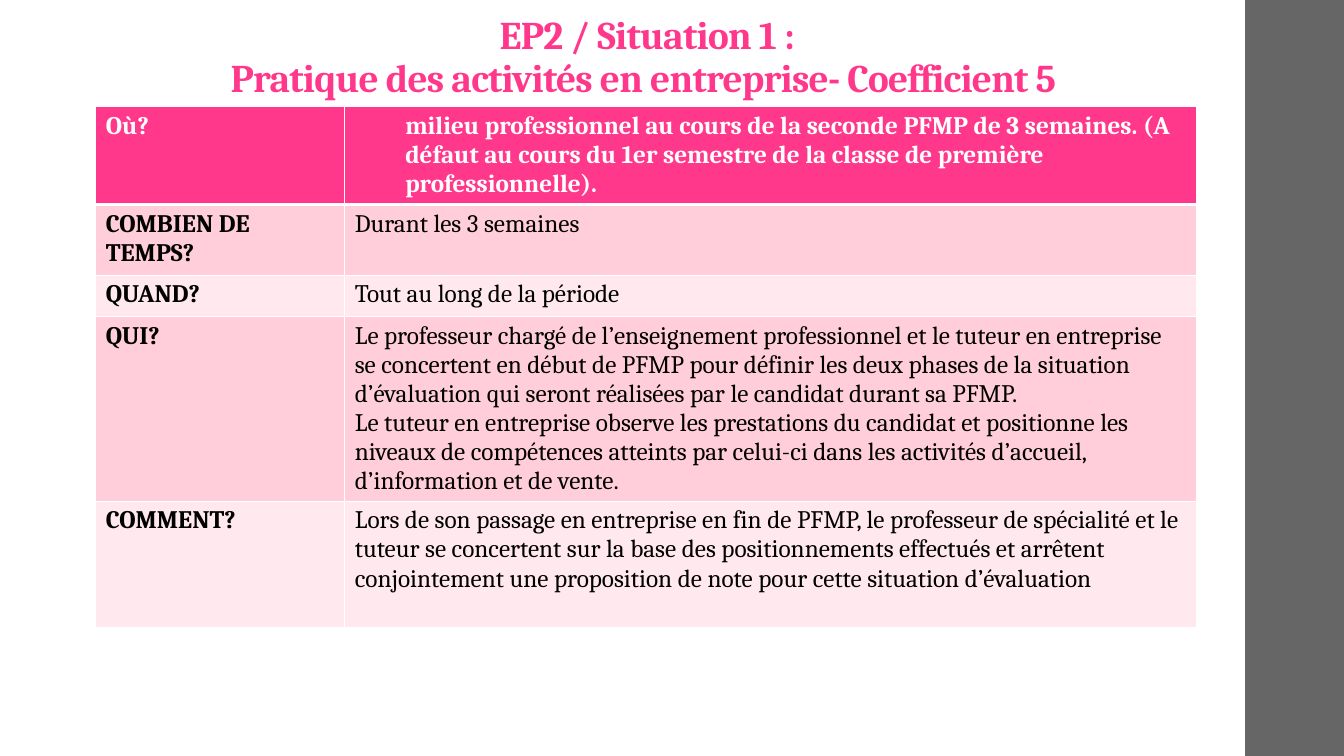
from pptx import Presentation
from pptx.dml.color import RGBColor
from pptx.enum.shapes import MSO_SHAPE as SHAPE
from pptx.enum.text import MSO_ANCHOR as ANCHOR, MSO_AUTO_SIZE as AUTO, PP_ALIGN as ALIGN
from pptx.oxml import parse_xml
from pptx.oxml.ns import nsdecls
from pptx.util import Inches, Pt

WHITE = RGBColor(0xFF, 0xFF, 0xFF)
BLACK = RGBColor(0, 0, 0)
GREY = RGBColor(0x66, 0x66, 0x66)
PINK = RGBColor(0xFF, 0x38, 0x8C)
BANDS = [RGBColor(0xFF, 0xE8, 0xEE), RGBColor(0xFF, 0xCE, 0xDA)]
FONT = "Cambria"

COL_WIDTHS = [2.47, 8.45]
ROWS = [
    (0.97, "Où?", ["milieu professionnel au cours de la seconde PFMP de 3 semaines. "
                   "(A défaut au cours du 1er semestre de la classe de première professionnelle)."]),
    (0.7, "COMBIEN DE TEMPS?", ["Durant les 3 semaines"]),
    (0.41, "QUAND?", ["Tout au long de la période"]),
    (1.82, "QUI?", [
        "Le professeur chargé de l’enseignement professionnel et le tuteur en entreprise "
        "se concertent en début de PFMP pour définir les deux phases de la situation "
        "d’évaluation qui seront réalisées par le candidat durant sa PFMP.",
        "Le tuteur en entreprise observe les prestations du candidat et positionne les "
        "niveaux de compétences atteints par celui-ci dans les activités d’accueil, "
        "d’information et de vente."]),
    (1.26, "COMMENT?", [
        "Lors de son passage en entreprise en fin de PFMP, le professeur de spécialité et le "
        "tuteur se concertent sur la base des positionnements effectués et arrêtent "
        "conjointement une proposition de note pour cette situation d’évaluation"]),
]


def write(p, text, size=18, color=BLACK, bold=False, align=None, spacing=None, tracking=None):
    p.alignment = align
    p.line_spacing = spacing
    for i, line in enumerate(text.split("\n")):
        if i:
            p.add_line_break()
        r = p.add_run()
        r.text = line
        r.font.name, r.font.size, r.font.bold = FONT, Pt(size), bold
        r.font.color.rgb = color
        if tracking is not None:
            r._r.get_or_add_rPr().set("spc", str(int(tracking * 100)))


def set_borders(cell, **widths):
    tcPr = cell._tc.get_or_add_tcPr()
    for side in "LRTB":
        width = Pt(widths.get(side, 1))
        tcPr.append(parse_xml(
            f'<a:ln{side} {nsdecls("a")} w="{width}"><a:solidFill>'
            f'<a:srgbClr val="{WHITE}"/></a:solidFill></a:ln{side}>'))


def add_side_bar(slide, x, y, w, h):
    sp = slide.shapes.add_shape(SHAPE.RECTANGLE, Inches(x), Inches(y), Inches(w), Inches(h))
    sp.shadow.inherit = False
    sp.fill.solid()
    sp.fill.fore_color.rgb = GREY
    sp.line.fill.background()


def add_title(slide, x, y, w, h):
    sp = slide.shapes.title
    sp.left, sp.top, sp.width, sp.height = Inches(x), Inches(y), Inches(w), Inches(h)
    tf = sp.text_frame
    tf.word_wrap = True
    tf.auto_size = AUTO.NONE
    tf.vertical_anchor = ANCHOR.BOTTOM
    tf.margin_left = tf.margin_right = Inches(0.1)
    tf.margin_top, tf.margin_bottom = Inches(0.03), Inches(0.05)
    write(tf.paragraphs[0],
          "EP2 / Situation 1 :\nPratique des activités en entreprise- Coefficient 5 ",
          size=28, color=PINK, bold=True, align=ALIGN.CENTER, spacing=0.9, tracking=-0.5)


def add_situation_table(slide, x, y):
    w, h = sum(COL_WIDTHS), sum(row[0] for row in ROWS)
    table = slide.shapes.add_table(len(ROWS), len(COL_WIDTHS), Inches(x), Inches(y),
                                   Inches(w), Inches(h)).table
    for col, width in zip(table.columns, COL_WIDTHS):
        col.width = Inches(width)
    for i, (height, question, answer) in enumerate(ROWS):
        table.rows[i].height = Inches(height)
        header = i == 0
        for j, texts in enumerate([[question], answer]):
            cell = table.cell(i, j)
            set_borders(cell, T=3 if i == 1 else 1, B=3 if header else 1)
            cell.fill.solid()
            cell.fill.fore_color.rgb = PINK if header else BANDS[i % 2]
            tf = cell.text_frame
            for k, text in enumerate(texts):
                p = tf.add_paragraph() if k else tf.paragraphs[0]
                write(p, text, color=WHITE if header else BLACK, bold=header or j == 0)
                if header and j == 1:
                    p.level = 1
                    pPr = p._p.get_or_add_pPr()
                    pPr.set("marL", str(Inches(0.5)))
                    pPr.set("indent", "0")


def build_situation_slide(prs):
    slide = prs.slides.add_slide(prs.slide_layouts[5])
    slide.background.fill.solid()
    slide.background.fill.fore_color.rgb = WHITE
    add_side_bar(slide, 12.35, 0, 0.98, 7.5)
    add_title(slide, 1.12, -0.51, 10.6, 1.56)
    add_situation_table(slide, 0.95, 1.06)


def main():
    prs = Presentation()
    prs.slide_width, prs.slide_height = Inches(13.33), Inches(7.5)
    build_situation_slide(prs)
    prs.save("out.pptx")


if __name__ == "__main__":
    main()
